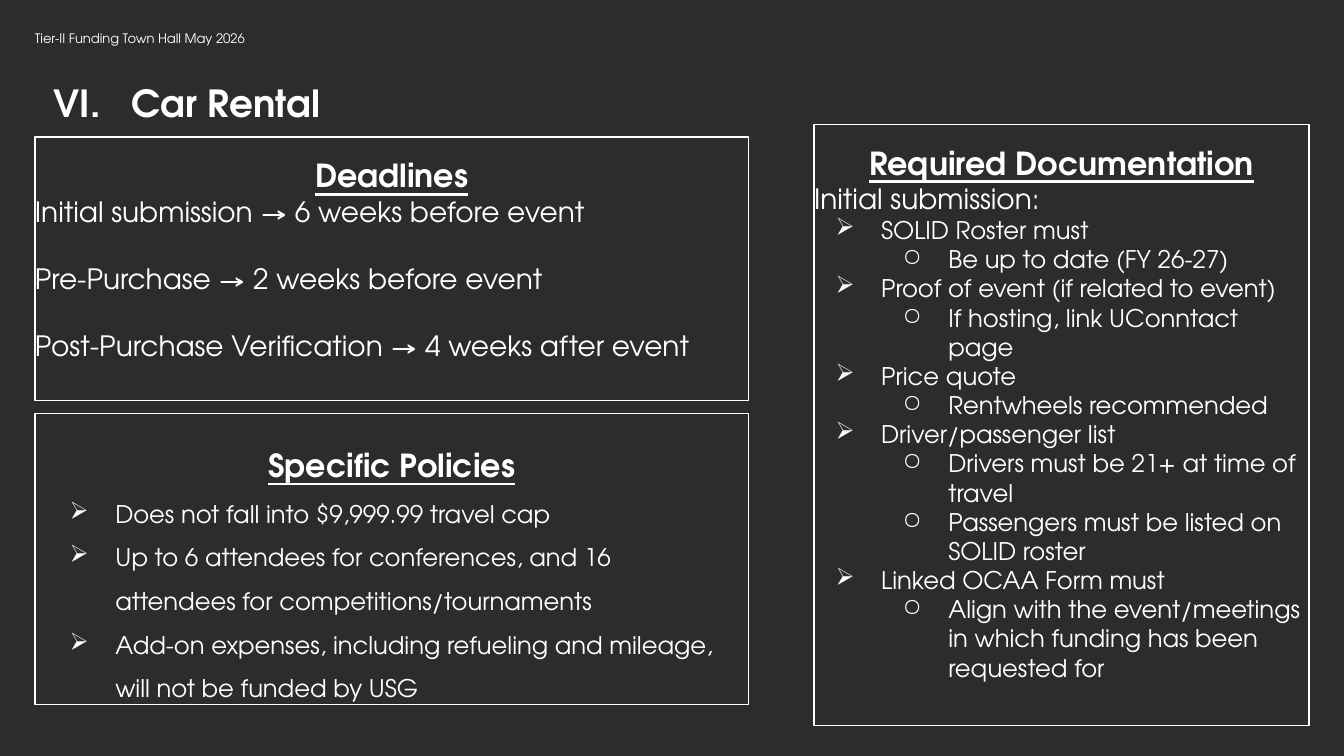
from lxml.etree import SubElement
from pptx import Presentation
from pptx.dml.color import RGBColor
from pptx.enum.shapes import MSO_SHAPE as SHAPE
from pptx.enum.text import MSO_ANCHOR as ANCHOR, PP_ALIGN as ALIGN
from pptx.oxml.ns import qn
from pptx.util import Pt

# Content
HEADER = "Tier-II Funding Town Hall May 2026"
TITLE = "VI.\tCar Rental"
DEADLINES = [
    "Initial submission → 6 weeks before event",
    "Pre-Purchase → 2 weeks before event",
    "Post-Purchase Verification → 4 weeks after event",
]
POLICIES = [
    "Does not fall into $9,999.99 travel cap",
    "Up to 6 attendees for conferences, and 16 attendees for competitions/tournaments",
    "Add-on expenses, including refueling and mileage, will not be funded by USG",
]
DOCUMENTS = [
    ("SOLID Roster must", ["Be up to date (FY 26-27)"]),
    ("Proof of event (if related to event)", ["If hosting, link UConntact page"]),
    ("Price quote", ["Rentwheels recommended"]),
    ("Driver/passenger list", ["Drivers must be 21+ at time of travel",
                               "Passengers must be listed on SOLID roster"]),
    ("Linked OCAA Form must",
     ["Align with the event/meetings in which funding has been requested for"]),
]

# Style
COLORS = {"background": "2C2C2E", "text": "FFFFFF", "line": "FFFFFF"}
FONT = "TeX Gyre Adventor"
BULLETS = ["➢", "○"]
LEFT, COLUMN_W = 18.7, 382.3
BODY, ITEM = 15, 13


def color(name):
    return RGBColor.from_string(COLORS[name])


def add_text(tf, text, size, bold=False, underline=False, align=ALIGN.LEFT,
             spacing=1.0, before=0, level=None, tab=None):
    """Add one paragraph; a level makes it a bullet."""
    p = tf.paragraphs[0]
    if p.runs:
        p = tf.add_paragraph()
    pPr = p._p.get_or_add_pPr()
    if level is not None:
        p.level = level
        pPr.set("marL", str(Pt(36 * (level + 1))))
        pPr.set("indent", str(Pt(-24.5)))
        clr = SubElement(pPr, qn("a:buClr"))
        SubElement(clr, qn("a:srgbClr"), val=COLORS["text"])
        SubElement(pPr, qn("a:buChar"), char=BULLETS[level])
    if tab:
        tabs = SubElement(pPr, qn("a:tabLst"))
        SubElement(tabs, qn("a:tab"), pos=str(Pt(tab)), algn="l")
    p.alignment, p.line_spacing = align, spacing
    if before:
        p.space_before = Pt(before)
    r = p.add_run()
    r.text = text
    f = r.font
    f.name, f.size, f.bold, f.underline = FONT, Pt(size), bold, underline
    f.color.rgb = color("text")


def set_frame(tf, insets=(0, 0, 0, 0), anchor=ANCHOR.TOP):
    tf.word_wrap, tf.vertical_anchor = True, anchor
    tf.margin_left, tf.margin_top, tf.margin_right, tf.margin_bottom = map(Pt, insets)
    return tf


def add_panel(s, heading, x, y, w, h, inset=0):
    sp = s.shapes.add_shape(SHAPE.RECTANGLE, Pt(x), Pt(y), Pt(w), Pt(h))
    sp.shadow.inherit = False
    sp.fill.background()
    sp.line.color.rgb, sp.line.width = color("line"), Pt(0.75)
    tf = set_frame(sp.text_frame, (inset,) * 4)
    add_text(tf, heading, 17, bold=True, underline=True, align=ALIGN.CENTER, spacing=1.5)
    return tf


prs = Presentation()
prs.slide_width, prs.slide_height = Pt(720), Pt(405)
s = prs.slides.add_slide(prs.slide_layouts[6])
s.background.fill.solid()
s.background.fill.fore_color.rgb = color("background")

# Title
sp = s.shapes.add_textbox(Pt(28.8), Pt(42.5), Pt(658.8), Pt(24.5))
add_text(set_frame(sp.text_frame, anchor=ANCHOR.BOTTOM), TITLE, 20,
         bold=True, spacing=1.15, tab=41.5)

# Deadlines
tf = add_panel(s, "Deadlines", LEFT, 73.5, COLUMN_W, 141)
for i, text in enumerate(DEADLINES):
    add_text(tf, text, BODY, before=18 if i else 0)

# Required documentation
tf = add_panel(s, "Required Documentation", 436.1, 66.8, 265.2, 321.8)
add_text(tf, "Initial submission:", BODY)
for text, details in DOCUMENTS:
    add_text(tf, text, ITEM, level=0)
    for detail in details:
        add_text(tf, detail, ITEM, level=1)

# Specific policies
tf = add_panel(s, "Specific Policies", LEFT, 221.6, COLUMN_W, 155.8, inset=7.2)
for text in POLICIES:
    add_text(tf, text, ITEM, level=0, spacing=1.5)

# Header
sp = s.shapes.add_textbox(Pt(LEFT), Pt(10.1), Pt(327.6), Pt(18.7))
add_text(set_frame(sp.text_frame, (0, 7.2, 7.2, 7.2)), HEADER, 7, spacing=1.15)

prs.save("out.pptx")
